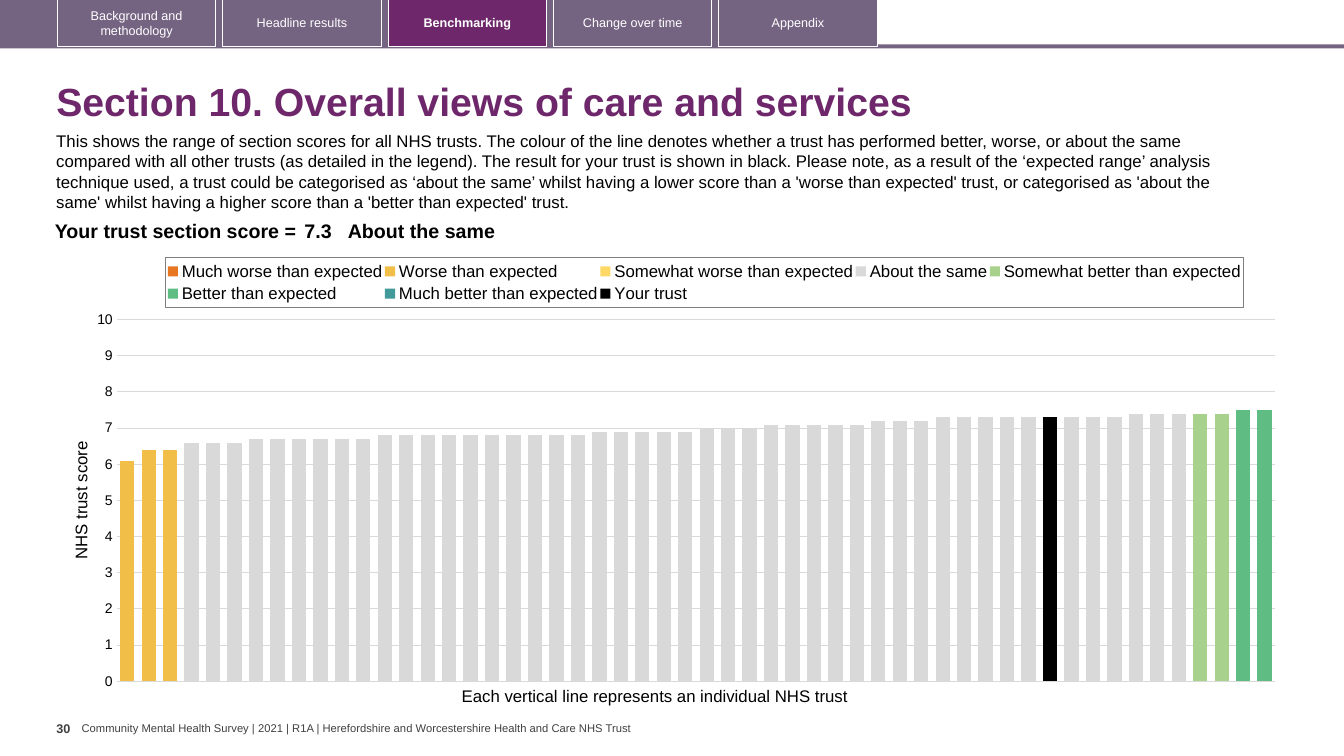
from copy import deepcopy

from lxml import etree
from pptx import Presentation
from pptx.chart.axis import ValueAxis
from pptx.chart.data import CategoryChartData
from pptx.dml.color import RGBColor
from pptx.enum.chart import XL_CHART_TYPE, XL_LEGEND_POSITION, XL_TICK_LABEL_POSITION, XL_TICK_MARK
from pptx.enum.shapes import MSO_SHAPE
from pptx.enum.text import MSO_ANCHOR, PP_ALIGN
from pptx.oxml.ns import qn
from pptx.util import Inches, Pt

COLUMN = XL_CHART_TYPE.COLUMN_CLUSTERED
LEGEND_TOP = XL_LEGEND_POSITION.TOP
NO_LABELS = XL_TICK_LABEL_POSITION.NONE
TICK_NONE, TICK_OUT = XL_TICK_MARK.NONE, XL_TICK_MARK.OUTSIDE
RECT = MSO_SHAPE.RECTANGLE
TOP, MIDDLE = MSO_ANCHOR.TOP, MSO_ANCHOR.MIDDLE
LEFT, CENTER, RIGHT = PP_ALIGN.LEFT, PP_ALIGN.CENTER, PP_ALIGN.RIGHT

PLUM = RGBColor(0x6D, 0x27, 0x6A)
MAUVE = RGBColor(0x75, 0x63, 0x82)
WHITE = RGBColor(0xFF, 0xFF, 0xFF)
BLACK = RGBColor(0, 0, 0)
DARK_GREY = RGBColor(0x40, 0x40, 0x40)
AXIS_GREY = RGBColor(0x59, 0x59, 0x59)
LEGEND_GREY = RGBColor(0x7F, 0x7F, 0x7F)
PALE_GREY = RGBColor(0xD9, 0xD9, 0xD9)

TABS = ["Background and methodology", "Headline results", "Benchmarking",
        "Change over time", "Appendix"]
CURRENT_TAB = "Benchmarking"
INTRO = (
    "This shows the range of section scores for all NHS trusts. The colour of the line denotes "
    "whether a trust has performed better, worse, or about the same compared with all other trusts "
    "(as detailed in the legend). The result for your trust is shown in black. Please note, as a "
    "result of the ‘expected range’ analysis technique used, a trust could be categorised as "
    "‘about the same’ whilst having a lower score than a 'worse than expected' trust, or "
    "categorised as 'about the same' whilst having a higher score than a 'better than expected' trust.")

TRUST_COUNT = 54
# Each band: name, colour, index of its first trust, (score, number of trusts) in rank order
BANDS = [
    ("Much worse than expected", RGBColor(0xE8, 0x77, 0x22), 0, []),
    ("Worse than expected", RGBColor(0xF1, 0xBE, 0x48), 0, [(6.1, 1), (6.4, 2)]),
    ("Somewhat worse than expected", RGBColor(0xFF, 0xD9, 0x66), 0, []),
    ("About the same", PALE_GREY, 3,
     [(6.6, 3), (6.7, 6), (6.8, 10), (6.9, 5), (7, 3), (7.1, 5), (7.2, 3), (7.3, 9), (7.4, 3)]),
    ("Somewhat better than expected", RGBColor(0xA9, 0xD1, 0x8E), 50, [(7.4, 2)]),
    ("Better than expected", RGBColor(0x5F, 0xBD, 0x83), 52, [(7.5, 2)]),
    ("Much better than expected", RGBColor(0x41, 0x99, 0x99), 0, []),
    ("Your trust", BLACK, 43, [(7.3, 1)]),
]


def set_font(font, size, color=BLACK, bold=False, name="Arial"):
    font.size, font.bold, font.name = Pt(size), bold, name
    font.color.rgb = color


def write(tf, text, size, color=BLACK, bold=False, align=LEFT, spacing=None):
    p = tf.paragraphs[0]
    p.alignment = align
    if spacing:
        p.line_spacing = spacing
    r = p.add_run()
    r.text = text
    set_font(r.font, size, color, bold)


def add_text(s, box, text, size, wrap=True, anchor=TOP, insets=(0.1, 0.05), **fmt):
    tf = s.shapes.add_textbox(*map(Inches, box)).text_frame
    tf.word_wrap, tf.vertical_anchor = wrap, anchor
    tf.margin_left = tf.margin_right = Inches(insets[0])
    tf.margin_top = tf.margin_bottom = Inches(insets[1])
    write(tf, text, size, **fmt)


def add_rect(s, box, fill=None, line=None):
    sp = s.shapes.add_shape(RECT, *map(Inches, box))
    sp.shadow.inherit = False
    if fill is None:
        sp.fill.background()
    else:
        sp.fill.solid()
        sp.fill.fore_color.rgb = fill
    if line is None:
        sp.line.fill.background()
    else:
        sp.line.color.rgb = line
        sp.line.width = Pt(0.75)
    return sp


def add_tab_bar(s, left, top, width, height):
    add_rect(s, (left, top + height - 0.03, width, 0.04), MAUVE)
    add_rect(s, (left, top, 8.73, height), MAUVE)
    for i, label in enumerate(TABS):
        current = label == CURRENT_TAB
        tab = add_rect(s, (left + 0.6 + 1.64 * i, top - 0.01, 1.57, height),
                       PLUM if current else None, WHITE)
        tab.text_frame.word_wrap = True
        tab.text_frame.vertical_anchor = MIDDLE
        write(tab.text_frame, label, 9, WHITE, current, CENTER)


def add_heading(s, left, top):
    add_text(s, (left, top, 12.49, 0.72), "Section 10. Overall views of care and services", 28,
             anchor=MIDDLE, color=PLUM, bold=True, spacing=0.9)
    add_text(s, (left, top + 0.58, 12.13, 0.91), INTRO, 12)


def add_score_table(s, left, top, width, height):
    table = s.shapes.add_table(1, 3, *map(Inches, (left, top, width, height))).table
    table.first_row = table.horz_banding = False
    columns = [(2.63, "Your trust section score =", RIGHT, 0.04), (0.47, "7.3", LEFT, 0.04),
               (width - 3.1, "About the same", LEFT, 0)]
    for i, (col_width, text, align, side) in enumerate(columns):
        table.columns[i].width = Inches(col_width)
        cell = table.cell(0, i)
        cell.fill.background()
        cell.margin_left = cell.margin_right = Inches(side)
        cell.margin_top = cell.margin_bottom = Inches(0.04)
        write(cell.text_frame, text, 14, bold=True, align=align)


def manual_layout(x, y, w, h, inner=False):
    layout = etree.Element(qn("c:layout"))
    manual = etree.SubElement(layout, qn("c:manualLayout"))
    target = [("layoutTarget", "inner")] if inner else []
    for tag, val in target + [("xMode", "edge"), ("yMode", "edge"),
                              ("x", x), ("y", y), ("w", w), ("h", h)]:
        etree.SubElement(manual, qn("c:" + tag)).set("val", str(val))
    return layout


def move_last_series_to_right_axis(plot_area):
    bars, cat, val = (plot_area.find(qn("c:" + tag)) for tag in ("barChart", "catAx", "valAx"))
    right_bars, right_cat, right_val = map(deepcopy, (bars, cat, val))
    bars.remove(bars.findall(qn("c:ser"))[-1])
    for ser in right_bars.findall(qn("c:ser"))[:-1]:
        right_bars.remove(ser)
    cat_id, val_id = "50010", "50020"
    for el, new_id in zip(right_bars.findall(qn("c:axId")), (cat_id, val_id)):
        el.set("val", new_id)
    for ax, own, other in ((right_cat, cat_id, val_id), (right_val, val_id, cat_id)):
        ax.find(qn("c:axId")).set("val", own)
        ax.find(qn("c:crossAx")).set("val", other)
    right_val.find(qn("c:axPos")).set("val", "r")
    right_val.find(qn("c:crosses")).set("val", "max")
    bars.addnext(right_bars)
    val.addnext(right_val)
    right_val.addnext(right_cat)
    axis = ValueAxis(right_val)
    axis.has_major_gridlines = axis.has_title = False
    axis.major_tick_mark, axis.tick_label_position = TICK_OUT, NO_LABELS
    set_font(axis.tick_labels.font, 12, AXIS_GREY, name="Calibri")


def add_score_chart(s, left, top, width, height):
    data = CategoryChartData()
    data.categories = [str(n + 1) for n in range(TRUST_COUNT)]
    for name, _, start, groups in BANDS:
        scores = [None] * start + [score for score, count in groups for _ in range(count)]
        data.add_series(name, scores + [None] * (TRUST_COUNT - len(scores)))
    box = map(Inches, (left, top, width, height))
    chart = s.shapes.add_chart(COLUMN, *box, data).chart
    chart.has_title = False
    set_font(chart.font, 10, name="Calibri")
    plot = chart.plots[0]
    plot.gap_width, plot.overlap, plot.vary_by_categories = 50, 100, False
    for ser, (_, color, _, _) in zip(plot.series, BANDS):
        ser.format.fill.solid()
        ser.format.fill.fore_color.rgb = color
    chart.category_axis.visible = False
    axis = chart.value_axis
    axis.minimum_scale, axis.maximum_scale, axis.major_unit = 0, 10, 1
    axis.major_tick_mark = TICK_NONE
    axis.format.line.fill.background()
    axis.major_gridlines.format.line.color.rgb = PALE_GREY
    axis.major_gridlines.format.line.width = Pt(0.75)
    axis.tick_labels.number_format, axis.tick_labels.number_format_is_linked = "0", False
    set_font(axis.tick_labels.font, 10)
    write(axis.axis_title.text_frame, "NHS trust score", 12)
    chart.has_legend = True
    legend = chart.legend
    legend.position, legend.include_in_layout = LEGEND_TOP, False
    set_font(legend.font, 12)
    el = legend._element
    for old in el.findall(qn("c:layout")):
        el.remove(old)
    el.find(qn("c:legendPos")).addnext(manual_layout(0.08, 0.02, 0.88, 0.11))
    border = etree.Element(qn("c:spPr"))
    line = etree.SubElement(border, qn("a:ln"), w=str(Pt(0.75)))
    fill = etree.SubElement(line, qn("a:solidFill"))
    etree.SubElement(fill, qn("a:srgbClr"), val=str(LEGEND_GREY))
    el.find(qn("c:txPr")).addprevious(border)
    plot_area = plot._element.getparent()
    for old in plot_area.findall(qn("c:layout")):
        plot_area.remove(old)
    plot_area.insert(0, manual_layout(0.04, 0.158, 0.946, 0.808, inner=True))
    move_last_series_to_right_axis(plot_area)
    add_text(s, (left + 3.81, top + 4.28, 4.11, 0.3),
             "Each vertical line represents an individual NHS trust", 12, wrap=False)


def add_footer(s, left, top):
    add_text(s, (left, top, 0.25, 0.4), "30", 9, wrap=False, insets=(0, 0.05),
             color=DARK_GREY, bold=True)
    add_text(s, (left + 0.25, top + 0.06, 5.53, 0.13),
             "Community Mental Health Survey | 2021 | R1A | Herefordshire and Worcestershire "
             "Health and Care NHS Trust", 8, wrap=False, anchor=MIDDLE, insets=(0, 0),
             color=DARK_GREY)


def main():
    prs = Presentation()
    prs.slide_width, prs.slide_height = Inches(13.33), Inches(7.5)
    s = prs.slides.add_slide(prs.slide_layouts[6])
    add_tab_bar(s, -0.03, 0, 13.36, 0.47)
    add_heading(s, 0.46, 0.67)
    add_score_chart(s, 0.67, 2.47, 12.15, 4.44)
    add_score_table(s, 0.35, 2.15, 11.7, 0.31)
    add_footer(s, 0.56, 7.1)
    prs.save("out.pptx")


if __name__ == "__main__":
    main()
